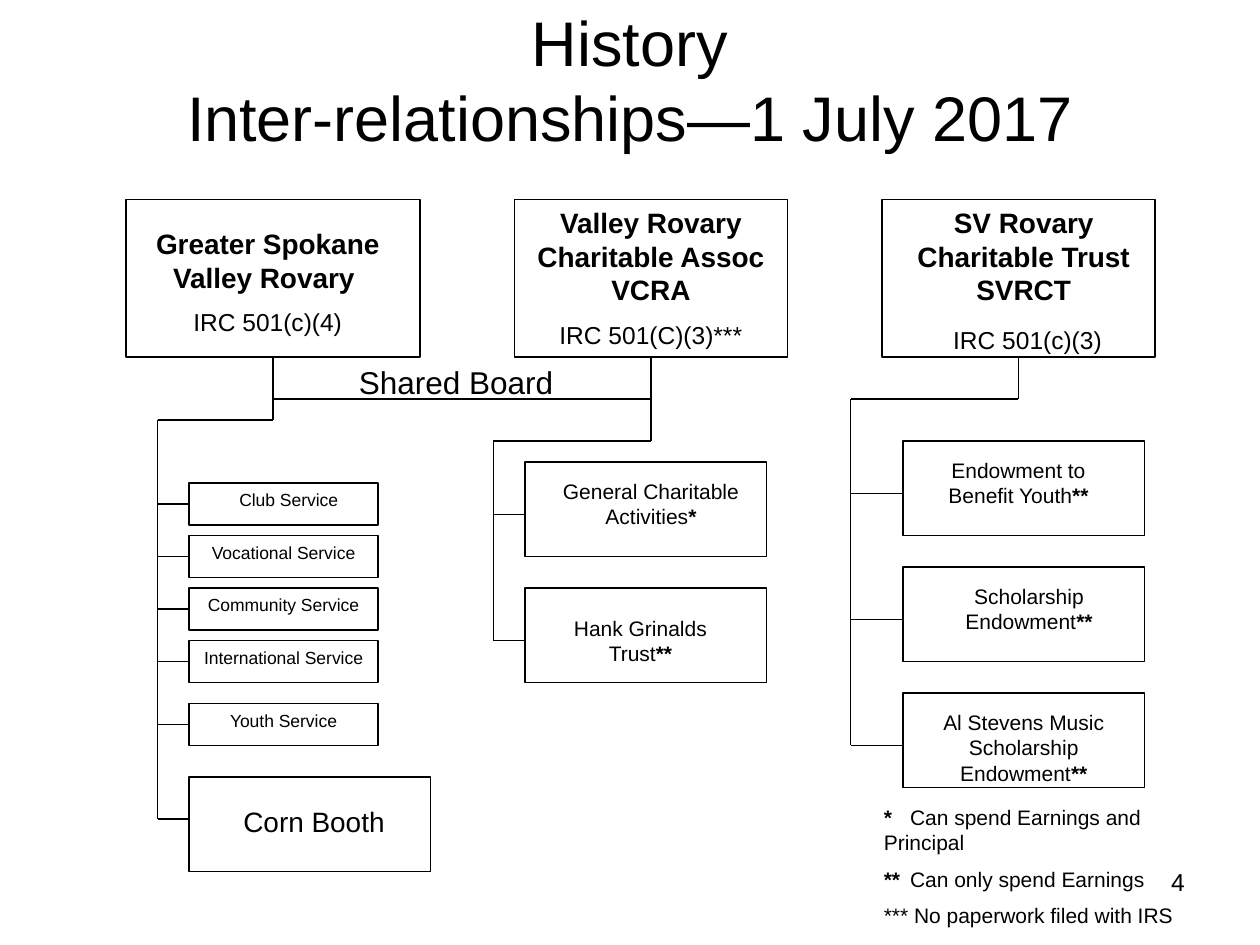
"""Build a chart of three linked service bodies and their programs."""
from typing import NamedTuple

from lxml.etree import SubElement
from pptx import Presentation
from pptx.dml.color import RGBColor
from pptx.enum.shapes import MSO_CONNECTOR as Link, MSO_SHAPE as Form
from pptx.enum.text import MSO_ANCHOR as Anchor, MSO_AUTO_SIZE as Fit, PP_ALIGN as Align
from pptx.oxml.ns import qn
from pptx.util import Pt

COLORS = {"ink": "000000", "paper": "FFFFFF"}
FONT = "Arial"
LINE = 0.75
BOTTOM, LEFT = 2, 1


class Box(NamedTuple):
    x: float
    y: float
    w: float
    h: float


class Run(NamedTuple):
    text: str
    size: float
    bold: bool = False


class Label(NamedTuple):
    box: Box
    paras: list
    align: Align = Align.CENTER
    wrap: bool = True


class Node(NamedTuple):
    box: Box
    label: Label
    drop: float = 30
    filled: bool = False


class Tree(NamedTuple):
    head: Node
    spine: float
    bend: float
    kids: list


def tint(name: str) -> RGBColor:
    return RGBColor.from_string(COLORS[name])


def add_run(para, run: Run) -> None:
    item = para.add_run()
    item.text = run.text
    font = item.font
    font.name, font.size, font.bold = FONT, Pt(run.size), run.bold
    font.color.rgb = tint("ink")


def add_label(slide, label: Label) -> None:
    frame = slide.shapes.add_textbox(*map(Pt, label.box)).text_frame
    frame.word_wrap = label.wrap
    frame.auto_size = Fit.SHAPE_TO_FIT_TEXT
    for i, runs in enumerate(label.paras):
        para = frame.add_paragraph() if i else frame.paragraphs[0]
        para.alignment = label.align
        para.space_before = Pt(runs[0].size * 0.55 if i else 0)
        for run in runs:
            add_run(para, run)
        if "\t" in runs[-1].text:
            tabs = SubElement(para._p.get_or_add_pPr(), qn("a:tabLst"))
            SubElement(tabs, qn("a:tab"), pos=str(Pt(15)), algn="l")


def add_node(slide, node: Node):
    shape = slide.shapes.add_shape(Form.RECTANGLE, *map(Pt, node.box))
    shape.shadow.inherit = False
    if node.filled:
        shape.fill.solid()
        shape.fill.fore_color.rgb = tint("paper")
    else:
        shape.fill.background()
    shape.line.color.rgb = tint("ink")
    shape.line.width = Pt(LINE)
    add_label(slide, node.label)
    return shape


def add_line(slide, x1: float, y1: float, x2: float, y2: float):
    line = slide.shapes.add_connector(Link.STRAIGHT, *map(Pt, (x1, y1, x2, y2)))
    line.line.color.rgb = tint("ink")
    line.line.width = Pt(LINE)
    SubElement(line._element.spPr, qn("a:effectLst"))
    return line


def mid(box: Box) -> float:
    return box.x + box.w / 2


def add_tree(slide, tree: Tree) -> None:
    head = tree.head.box
    shape = add_node(slide, tree.head)
    stem = add_line(slide, mid(head), head.y + head.h, mid(head), tree.bend)
    stem.begin_connect(shape, BOTTOM)
    add_line(slide, tree.spine, tree.bend, mid(head), tree.bend)
    last = tree.kids[-1]
    add_line(slide, tree.spine, tree.bend, tree.spine, last.box.y + last.drop)
    for kid in tree.kids:
        shape = add_node(slide, kid)
        y = kid.box.y + kid.drop
        twig = add_line(slide, tree.spine, y, kid.box.x, y)
        if kid.drop == kid.box.h / 2:
            twig.end_connect(shape, LEFT)


def head_node(x: float, w: float, text: Box, name: str, code: list,
              filled: bool = False) -> Node:
    label = Label(text, [[Run(name, 16, True)], code])
    return Node(Box(x, 114, w, 90), label, filled=filled)


def service(y: float, name: str, shift: float = 0) -> Node:
    text = Box(108 + shift, y, 108 - shift, 19.5)
    return Node(Box(108, y, 108, 24), Label(text, [[Run(name, 10)]]), 12)


def fund(x: float, y: float, text: Box, name: str, mark: str) -> Node:
    label = Label(text, [[Run(name, 12), Run(mark, 12, True)]])
    return Node(Box(x, y, 138, 54), label)


TREES = [
    Tree(head_node(72, 168, Box(72, 126, 162, 97), "Greater Spokane Valley Rovary ",
                   [Run("IRC 501(c)(4)", 14)]), 90, 240, [
        service(276, "Club Service", 6),
        service(306, "Vocational Service"),
        service(336, "Community Service"),
        service(366, "International Service"),
        service(402, "Youth Service"),
        Node(Box(108, 444, 138, 54), Label(Box(132, 456, 96.5, 26.5),
             [[Run("Corn Booth", 16)]], Align.LEFT, False), 24)]),
    Tree(head_node(294, 156, Box(282, 114, 180, 167), "Valley Rovary Charitable Assoc VCRA",
                   [Run("IRC 501(C)(3)***", 14)], True), 282, 252, [
        fund(300, 264, Box(306, 270, 132, 36), "General Charitable Activities", "*"),
        fund(300, 336, Box(312, 348, 108, 36), "Hank Grinalds Trust", "**")]),
    Tree(head_node(504, 156, Box(510, 114, 150, 94), "SV Rovary Charitable Trust SVRCT",
                   [Run(" ", 16), Run("IRC 501(c)(3)", 14)]), 486, 228, [
        fund(516, 252, Box(522, 258, 120, 36), "Endowment to Benefit Youth", "**"),
        fund(516, 324, Box(522, 330, 132, 36), "Scholarship Endowment", "**"),
        fund(516, 396, Box(522, 402, 126, 51), "Al Stevens Music Scholarship Endowment", "**")]),
]
LABELS = [
    Label(Box(198, 204, 132, 29), [[Run("Shared Board", 18)]], Align.LEFT),
    Label(Box(498, 456, 210, 65.5), [
        [Run("*", 12, True), Run("\tCan spend Earnings and Principal", 12)],
        [Run("**", 12, True), Run("\tCan only spend Earnings", 12)],
        [Run("*** No paperwork filed with IRS", 12)]], Align.LEFT),
    Label(Box(516, 492, 168, 37.5), [[Run("4", 14)]], Align.RIGHT),
]


def add_title(slide) -> None:
    title = slide.shapes.title
    title.left, title.top, title.width, title.height = map(Pt, (36, 0, 648, 90))
    frame = title.text_frame
    frame.vertical_anchor = Anchor.MIDDLE
    para = frame.paragraphs[0]
    para.alignment = Align.CENTER
    add_run(para, Run("History", 36))
    para.add_line_break()
    add_run(para, Run("Inter-relationships—1 July 2017", 36))


def main() -> None:
    deck = Presentation()
    deck.slide_width, deck.slide_height = Pt(720), Pt(540)
    slide = deck.slides.add_slide(deck.slide_layouts[5])
    add_title(slide)
    for tree in TREES:
        add_tree(slide, tree)
    left, right = (mid(tree.head.box) for tree in TREES[:2])
    add_line(slide, left, 228, right, 228)
    for label in LABELS:
        add_label(slide, label)
    deck.save("out.pptx")


if __name__ == "__main__":
    main()
